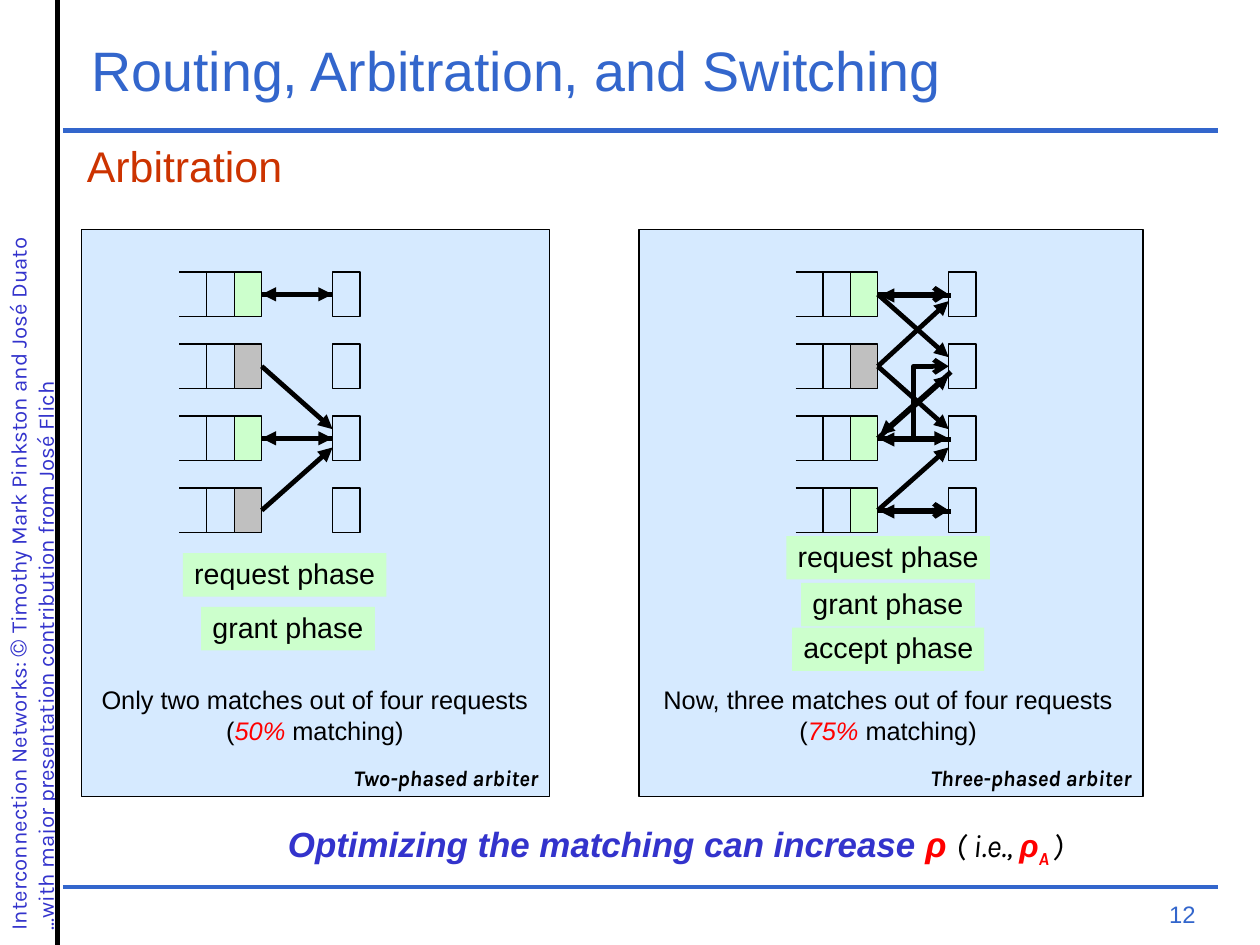
from pptx import Presentation
from pptx import util as u
from pptx.dml.color import RGBColor
from pptx.enum import shapes, text
from pptx.oxml import ns, xmlchemy as xml

COLORS = {"blue": "3366CC", "indigo": "3333CC", "rust": "CC3300", "sky": "99CCFF",
          "green": "CCFFCC", "gray": "C0C0C0", "red": "FF0000", "black": "000000"}
ALIGN = text.PP_ALIGN
ANCHOR = text.MSO_ANCHOR
SLOT_W, SLOT_H, ROW_GAP = 0.24, 0.39, 0.63
OUTPUT_X = 1.34
PADDING = (0.1, 0.05)


def rgb(name):
    return RGBColor.from_string(COLORS[name])


def span(words, size, color="black", font="Arial", bold=False, italic=False, base=None):
    return dict(words=words, size=size, color=color, font=font,
                bold=bold, italic=italic, base=base)


def write(box, paras, align=ALIGN.LEFT, anchor=ANCHOR.TOP, inset=(0, 0),
          wrap=True, spacing=None):
    frame = box.text_frame
    frame.word_wrap = wrap
    frame.vertical_anchor = anchor
    frame.margin_left = frame.margin_right = u.Inches(inset[0])
    frame.margin_top = frame.margin_bottom = u.Inches(inset[1])
    for index, spans in enumerate(paras):
        para = frame.add_paragraph() if index else frame.paragraphs[0]
        para.alignment = align
        if spacing:
            para.line_spacing = spacing
        for item in spans:
            run = para.add_run()
            run.text = item["words"]
            run.font.size = u.Pt(item["size"])
            run.font.name = item["font"]
            run.font.color.rgb = rgb(item["color"])
            run.font.bold = item["bold"]
            run.font.italic = item["italic"]
            if item["base"]:
                run.font._element.set("baseline", str(item["base"]))


def add_text(page, left, top, width, height, paras, **style):
    box = page.shapes.add_textbox(*map(u.Inches, (left, top, width, height)))
    write(box, paras, **style)
    return box


def add_rect(page, left, top, width, height, fill=None, outlined=True):
    rect = page.shapes.add_shape(shapes.MSO_SHAPE.RECTANGLE,
                                 *map(u.Inches, (left, top, width, height)))
    rect.shadow.inherit = False
    if fill:
        rect.fill.solid()
        rect.fill.fore_color.rgb = rgb(fill)
    else:
        rect.fill.background()
    if outlined:
        rect.line.color.rgb = rgb("black")
        rect.line.width = u.Pt(0.75)
    else:
        rect.line.fill.background()
    return rect


def style_line(line, color, width, tip=None):
    line.color.rgb = rgb(color)
    line.width = u.Pt(width)
    if tip:
        tail = xml.OxmlElement("a:tailEnd")
        tail.set("type", tip)
        line._get_or_add_ln().append(tail)


def add_line(page, start, end, color="black", width=3, tip=None):
    line = page.shapes.add_connector(shapes.MSO_CONNECTOR.STRAIGHT,
                                     *map(u.Inches, (*start, *end)))
    line._element.spPr.append(xml.OxmlElement("a:effectLst"))
    style_line(line.line, color, width, tip)
    return line


def add_frame(page, height):
    """Side credit, rules, heading and page number."""
    credit = ["Interconnection Networks: ", "© ", "Timothy Mark Pinkston and José Duato"]
    sizes = [14, 16, 14]
    first = [span(words, size, "indigo", "Karla") for words, size in zip(credit, sizes)]
    second = [span("...with major presentation contribution from José Flich",
                   14, "indigo", "Karla")]
    side = add_text(page, -3.88, 3.81, height, 0.61, [first, second], inset=(0.11, 0.06))
    side.rotation = 270
    for y in (1.14, 7.76):
        add_line(page, (0.55, y), (10.66, y), "blue")
    add_line(page, (0.5, 0), (0.5, height))
    add_text(page, 8.18, 7.81, 2.39, 0.28, [[span("12", 15, "blue")]],
             align=ALIGN.RIGHT, inset=(0.11, 0.06))
    add_text(page, 0.8, 0.32, 9.85, 0.58,
             [[span("Routing, Arbitration, and Switching", 35, "blue")]],
             anchor=ANCHOR.MIDDLE)
    add_text(page, 0.76, 1.22, 10.12, 0.45, [[span("Arbitration", 27, "rust")]])


def add_queues(page, left, top, waiting):
    """Four input queues facing four outputs; waiting rows have a gray head."""
    heads, outputs = [], []
    for row in range(4):
        y = top + row * ROW_GAP
        for edge in (y, y + SLOT_H):
            add_line(page, (left, edge), (left + SLOT_W, edge), width=0.75)
        add_rect(page, left + SLOT_W, y, SLOT_W, SLOT_H)
        fill = "gray" if row in waiting else "green"
        heads.append(add_rect(page, left + 2 * SLOT_W, y, SLOT_W, SLOT_H, fill))
        outputs.append(add_rect(page, left + OUTPUT_X, y, SLOT_W, SLOT_H))
    return heads, outputs


def add_arrows(page, left, top, heads, outputs, plan):
    start_x, end_x = left + 3 * SLOT_W, left + OUTPUT_X

    def middle(row):
        return top + row * ROW_GAP + SLOT_H / 2

    # Requests and accepts run from queue head to output
    for tip, links in (("triangle", plan["requests"]), ("arrow", plan["accepts"])):
        for source, target, lift in links:
            arrow = add_line(page, (start_x, middle(source)),
                             (end_x, middle(target) + lift), tip=tip)
            arrow.begin_connect(heads[source], 3)
            if not lift:
                arrow.end_connect(outputs[target], 1)
    # Grants run back from output to queue head
    shift = plan["grant_shift"]
    for source, target, lift in plan["grants"]:
        arrow = add_line(page, (end_x + shift, middle(source) + shift / 2 + lift),
                         (start_x + shift, middle(target) + shift / 2 - lift),
                         tip="triangle")
        if not shift:
            arrow.begin_connect(outputs[source], 1)
            arrow.end_connect(heads[target], 3)
    # Bent accepts turn halfway
    for source, target in plan["bends"]:
        turn = (start_x + end_x) / 2
        points = [(start_x, middle(source)), (turn, middle(source)),
                  (turn, middle(target)), (end_x, middle(target))]
        corners = [tuple(map(u.Inches, point)) for point in points]
        builder = page.shapes.build_freeform(*corners[0])
        builder.add_line_segments(corners[1:], close=False)
        bend = builder.convert_to_shape()
        bend.shadow.inherit = False
        bend.fill.background()
        style_line(bend.line, "black", 3, "arrow")


def add_arbiter(page, left, top, width, height, plan):
    """One shaded panel with queues, arrows, phase labels and result."""
    panel = add_rect(page, left, top, width, height, "sky")
    color = panel.fill._xPr.find(".//" + ns.qn("a:srgbClr"))
    alpha = xml.OxmlElement("a:alpha")
    alpha.set("val", "40000")
    color.append(alpha)
    write(panel, [[span(plan["name"], 14, font="Karla", bold=True, italic=True)]],
          align=ALIGN.RIGHT, anchor=ANCHOR.BOTTOM, inset=PADDING, wrap=False)

    queue_x, queue_y = left + plan["queue_x"], top + 0.37
    heads, outputs = add_queues(page, queue_x, queue_y, plan["waiting"])
    add_arrows(page, queue_x, queue_y, heads, outputs, plan)

    for words, label_width, center, label_y in plan["phases"]:
        label = add_rect(page, left + center - label_width / 2, top + label_y,
                         label_width, 0.38, "green", outlined=False)
        write(label, [[span(words, 18)]], inset=PADDING, wrap=False, spacing=0.93)

    share = [span("(", 16), span(plan["share"], 16, "red", italic=True),
             span(" matching)", 16)]
    result_width = plan["result_width"]
    add_text(page, left + plan["result_x"], top + 3.93, result_width, 0.64,
             [[span(plan["result"], 16)], share],
             align=ALIGN.CENTER, inset=PADDING, wrap=False)


def add_conclusion(page, left, top, width, height):
    strong = dict(bold=True, italic=True)
    add_text(page, left, top, width, height, [[
        span("Optimizing the matching can increase ", 22, "indigo", **strong),
        span("ρ ", 22, "red", **strong),
        span("( i.e., ", 20, font="Karla", italic=True),
        span("ρ", 20, "red", **strong),
        span("A ", 20, "red", "Karla", base=-25000, **strong),
        span(")", 20, font="Karla", italic=True)]], wrap=False)


# Links are (from row, to row, offset from the middle of the output side)
COMMON_REQUESTS = [(0, 0, 0), (2, 2, 0), (1, 2, -0.08), (3, 2, 0.08)]
TWO_PHASED = dict(
    name="Two-phased arbiter", queue_x=0.86, waiting=(1, 3),
    requests=COMMON_REQUESTS, accepts=[], bends=[],
    grants=[(0, 0, 0), (2, 2, 0)], grant_shift=0,
    phases=[("request phase", 1.78, 1.78, 2.83), ("grant phase", 1.52, 1.81, 3.3)],
    result="Only two matches out of four requests", share="50%",
    result_x=0.07, result_width=3.95)
THREE_PHASED = dict(
    name="Three-phased arbiter", queue_x=1.37, waiting=(1,),
    requests=COMMON_REQUESTS + [(0, 1, -0.08), (1, 0, 0.06), (2, 1, 0.08), (3, 3, 0)],
    accepts=[(0, 0, 0), (3, 3, 0)], bends=[(2, 1)],
    grants=[(0, 0, 0), (2, 2, 0), (3, 3, 0), (1, 2, 0.04)], grant_shift=0.02,
    phases=[("request phase", 1.78, 2.18, 2.68), ("grant phase", 1.52, 2.18, 3.09),
            ("accept phase", 1.68, 2.18, 3.48)],
    result="Now, three matches out of four requests", share="75%",
    result_x=0.1, result_width=4.16)


def main():
    deck = Presentation()
    deck.slide_width, deck.slide_height = u.Cm(28), u.Cm(21)
    page = deck.slides.add_slide(deck.slide_layouts[6])
    add_frame(page, 8.27)
    add_arbiter(page, 0.71, 2.01, 4.1, 4.96, TWO_PHASED)
    add_arbiter(page, 5.59, 2.01, 4.41, 4.96, THREE_PHASED)
    add_conclusion(page, 2.52, 7.2, 7.1, 0.37)
    deck.save("out.pptx")


if __name__ == "__main__":
    main()
